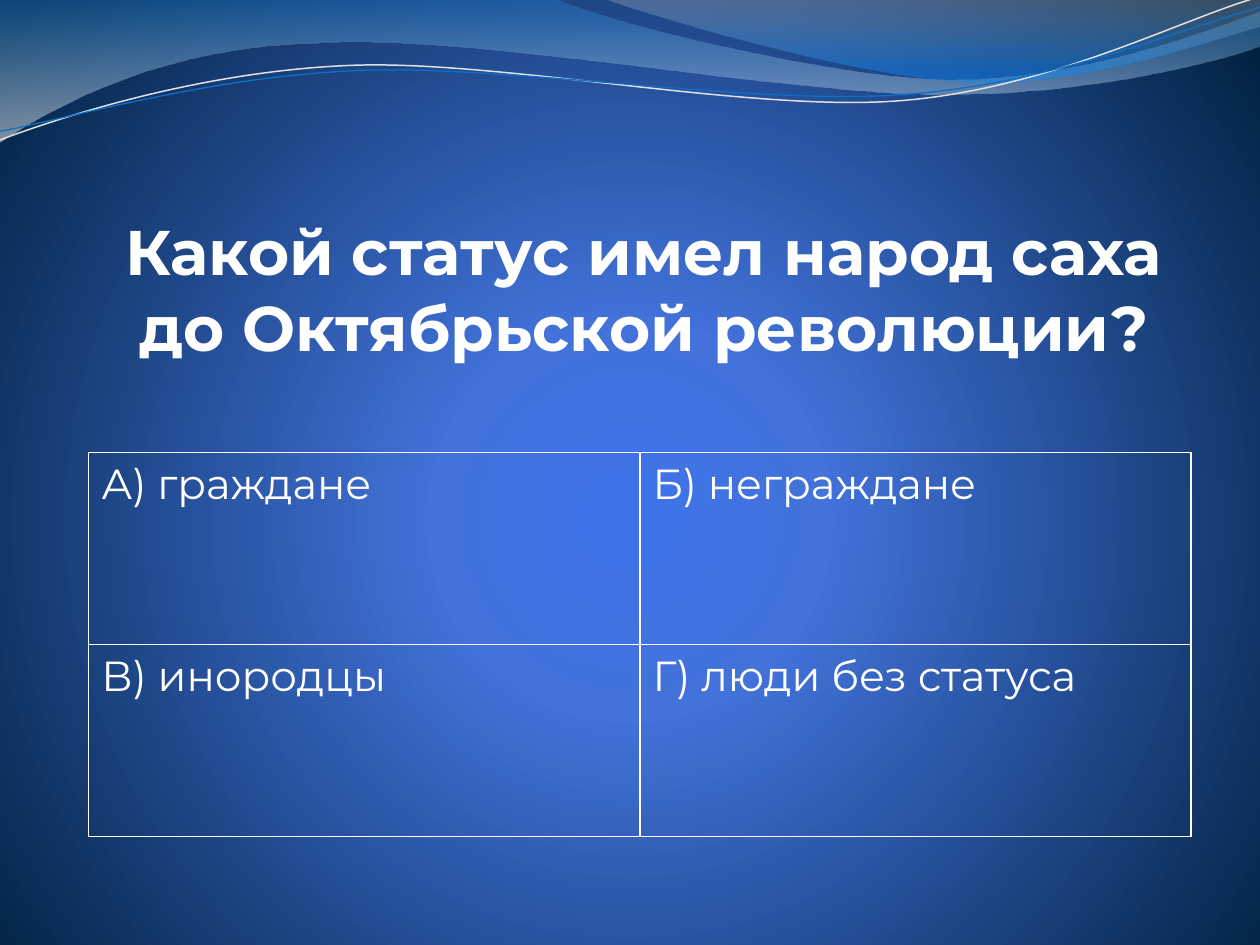
"""Build a quiz slide: a question above a two-by-two grid of answers."""
from pptx import Presentation, util as u
from pptx.dml.color import RGBColor
from pptx.enum import text
from pptx.oxml import parse_xml
from pptx.oxml.ns import nsdecls, qn

WHITE = RGBColor(0xFF, 0xFF, 0xFF)
PALE_GRAY = RGBColor(0xE1, 0xE1, 0xE1)
SILVER = RGBColor(0xE7, 0xE7, 0xE7)
GRAY = RGBColor(0xBD, 0xBD, 0xBD)
LINE_BLUE = RGBColor(0x0F, 0x6F, 0xC6)
WAVE_BLUE = RGBColor(0x1D, 0x73, 0xBF)
BRIGHT_BLUE = RGBColor(0x13, 0x8A, 0xF4)
GLOW_BLUE = RGBColor(0x3E, 0x73, 0xEB)
MID_BLUE = RGBColor(0x42, 0x72, 0xDA)
NIGHT_BLUE = RGBColor(0x00, 0x22, 0x41)
FONT = "Montserrat"

DOWNWARD = '<a:lin ang="5400000" scaled="0"/>'
RADIAL = ('<a:path path="circle">'
          '<a:fillToRect l="10000" t="110000" r="10000" b="100000"/></a:path>')
UNITS_PER_POINT = 10
STRAND_ROTATION = 357.3

BACKGROUND_STOPS = [(0, GLOW_BLUE, 100), (25, MID_BLUE, 100), (100, NIGHT_BLUE, 100)]
WAVES = [
    ([(0, 0), (316.8, -0.7),
      (342.7, 12.2, 478.1, 45.4, 545.8, 45.4),
      (614.2, 45.4, 689.8, 18.7, 720, 6.5), (720.7, 25.9),
      (707.8, 31.7, 626.4, 54.7, 537.1, 54),
      (447.8, 54, 275, 20.2, 185, 24.5),
      (92.9, 25.9, 33.1, 59.8, -0.7, 81.4)],
     [(0, WAVE_BLUE, 45), (100, SILVER, 55)]),
    ([(344.9, -0.7),
      (366.5, 7.9, 491, 44.6, 553.7, 46.8),
      (616.3, 49.7, 691.9, 23, 720, 15.1), (720, 0)],
     [(0, GRAY, 30), (80, BRIGHT_BLUE, 45)]),
]
STRANDS = [
    ([(-1.4, 63), (33.8, 51.7, 114.1, 29.4, 199.8, 29.9),
      (284.8, 30.3, 425.8, 67.3, 512.4, 64.9),
      (599, 62.4, 676.5, 25.7, 720.2, 15.5)], PALE_GRAY, 0.85),
    ([(-1.1, 58), (32.9, 53.8, 118.3, 32.5, 204.1, 33),
      (290.6, 33.4, 428.9, 63.8, 515.5, 61.4),
      (601.3, 59.6, 678.4, 30.1, 721.4, 21.3)], LINE_BLUE, 0.75),
]
QUESTION = "Какой статус имел народ саха до Октябрьской революции?"
ANSWERS = [["А) граждане", "Б) неграждане"],
           ["В) инородцы", "Г) люди без статуса"]]


def set_gradient(fill, parent, stops, direction):
    fill.solid()
    fill.fore_color.rgb = stops[0][1]
    stop_xml = "".join(
        f'<a:gs pos="{position * 1000}"><a:srgbClr val="{color}">'
        f'<a:alpha val="{opacity * 1000}"/></a:srgbClr></a:gs>'
        for position, color, opacity in stops)
    gradient = parse_xml(f'<a:gradFill {nsdecls("a")} rotWithShape="1">'
                         f'<a:gsLst>{stop_xml}</a:gsLst>{direction}</a:gradFill>')
    parent.replace(parent.find(qn("a:solidFill")), gradient)


def bend_segments(shape, segments):
    lines = iter(list(shape.element.iter(qn("a:lnTo"))))
    for segment in segments[1:]:
        first = next(lines)
        if len(segment) == 6:
            curve = parse_xml(f'<a:cubicBezTo {nsdecls("a")}/>')
            first.addprevious(curve)
            for line in (first, next(lines), next(lines)):
                curve.append(line[0])
                line.getparent().remove(line)


def add_outline(slide, segments, close):
    points = [(segment[i] * UNITS_PER_POINT, segment[i + 1] * UNITS_PER_POINT)
              for segment in segments for i in range(0, len(segment), 2)]
    builder = slide.shapes.build_freeform(*points[0], scale=u.Pt(1) / UNITS_PER_POINT)
    builder.add_line_segments(points[1:], close=close)
    shape = builder.convert_to_shape()
    bend_segments(shape, segments)
    shape.shadow.inherit = False
    return shape


def add_wave(slide, segments, stops):
    shape = add_outline(slide, segments, True)
    shape.line.fill.background()
    set_gradient(shape.fill, shape.element.spPr, stops, DOWNWARD)


def add_strand(slide, segments, color, width):
    shape = add_outline(slide, segments, False)
    shape.rotation = STRAND_ROTATION
    shape.fill.background()
    shape.line.color.rgb = color
    shape.line.width = u.Pt(width)


def set_font(paragraph, size, bold=False):
    paragraph.font.name = FONT
    paragraph.font.size = u.Pt(size)
    paragraph.font.bold = bold
    paragraph.font.color.rgb = WHITE


def add_question(slide):
    shape = slide.shapes.add_textbox(u.Pt(67.7), u.Pt(95.8), u.Pt(601.9), u.Pt(112.3))
    frame = shape.text_frame
    frame.word_wrap = True
    frame.vertical_anchor = text.MSO_ANCHOR.BOTTOM
    frame.margin_left = frame.margin_top = frame.margin_bottom = 0
    frame.margin_right = u.Pt(1.4)
    paragraph = frame.paragraphs[0]
    paragraph.text = QUESTION
    paragraph.alignment = text.PP_ALIGN.CENTER
    set_font(paragraph, 36, bold=True)


def set_borders(cell):
    properties = cell._tc.get_or_add_tcPr()
    for index, side in enumerate(("lnL", "lnR", "lnT", "lnB")):
        properties.insert(index, parse_xml(
            f'<a:{side} {nsdecls("a")} w="{u.Pt(1)}"><a:solidFill>'
            f'<a:srgbClr val="{WHITE}"/></a:solidFill></a:{side}>'))


def add_answers(slide):
    table = slide.shapes.add_table(
        len(ANSWERS), len(ANSWERS[0]),
        u.Pt(50.7), u.Pt(258.7), u.Pt(630), u.Pt(219.4)).table
    table.first_row = table.horz_banding = False
    for row, answers in enumerate(ANSWERS):
        for column, answer in enumerate(answers):
            cell = table.cell(row, column)
            cell.text = answer
            set_font(cell.text_frame.paragraphs[0], 24)
            cell.fill.background()
            set_borders(cell)


def main():
    presentation = Presentation()
    presentation.slide_width = u.Pt(720)
    presentation.slide_height = u.Pt(540)
    slide = presentation.slides.add_slide(presentation.slide_layouts[6])
    fill = slide.background.fill
    fill.solid()
    set_gradient(fill, slide.element.find(".//" + qn("p:bgPr")), BACKGROUND_STOPS, RADIAL)
    for segments, stops in WAVES:
        add_wave(slide, segments, stops)
    for segments, color, width in STRANDS:
        add_strand(slide, segments, color, width)
    add_question(slide)
    add_answers(slide)
    presentation.save("out.pptx")


if __name__ == "__main__":
    main()
